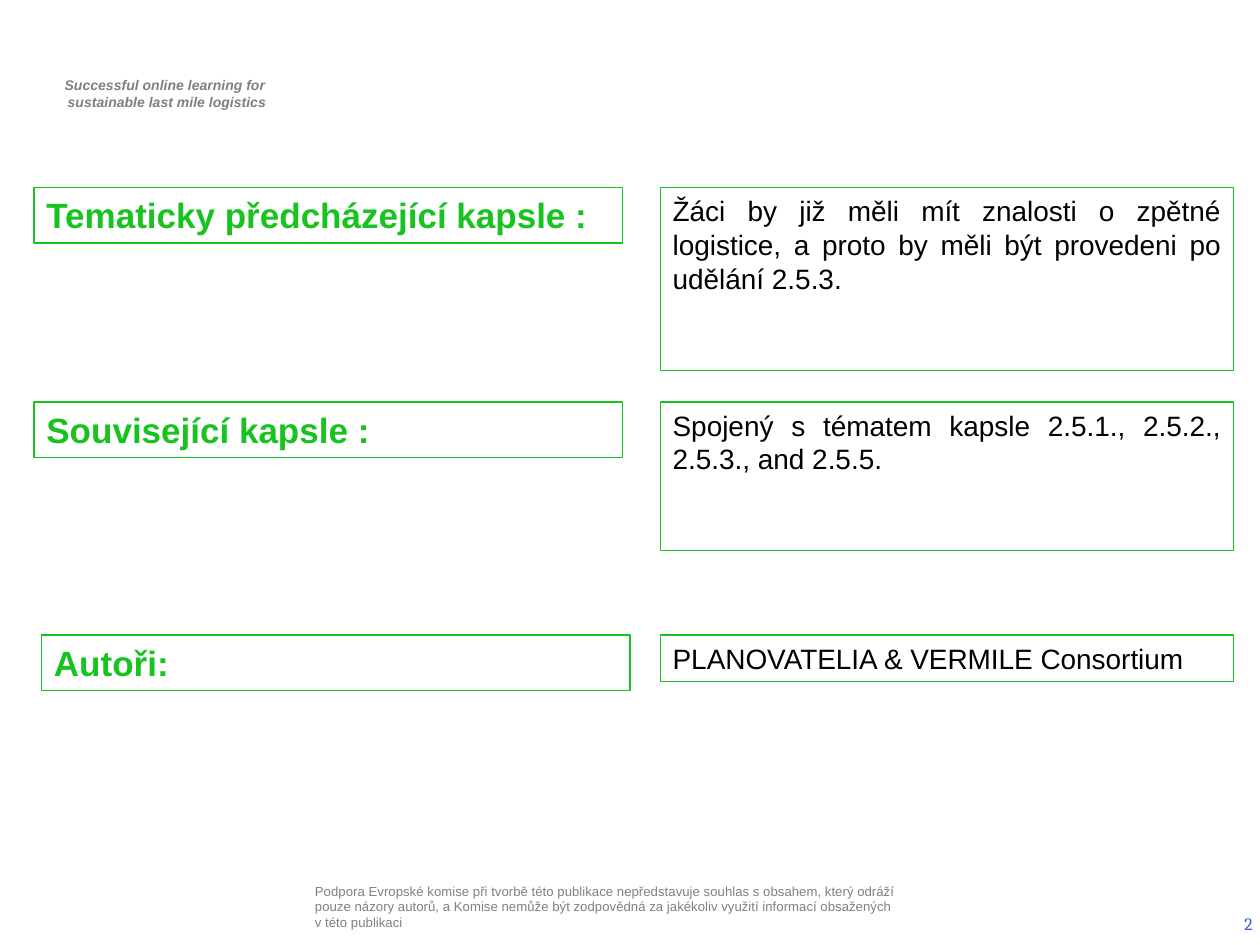
"""Build the capsule overview slide with related topics and authors."""
from pptx import Presentation
from pptx.dml.color import RGBColor
from pptx.enum.shapes import MSO_SHAPE as Shape
from pptx.enum.text import MSO_ANCHOR as Anchor, PP_ALIGN as Align
from pptx.util import Inches, Pt

COLORS = {"green": "18C320", "white": "FFFFFF", "black": "000000",
          "header": "7F7F7F", "footer": "808080", "number": "3366CC"}


def write(box, lines, size, color, align=Align.LEFT, anchor=Anchor.TOP,
          margins=(0.1, 0.05, 0.1, 0.05), bold=False, italic=False, name="Arial"):
    frame = box.text_frame
    frame.word_wrap = True
    frame.vertical_anchor = anchor
    (frame.margin_left, frame.margin_top,
     frame.margin_right, frame.margin_bottom) = map(Inches, margins)
    for index, line in enumerate(lines):
        para = frame.add_paragraph() if index else frame.paragraphs[0]
        para.alignment = align
        span = para.add_run()
        span.text = line
        span.font.name = name
        span.font.size = Pt(size)
        span.font.bold = bold
        span.font.italic = italic
        span.font.color.rgb = RGBColor.from_string(COLORS[color])


def add_panel(page, left, top, width, height):
    panel = page.shapes.add_shape(
        Shape.RECTANGLE, Inches(left), Inches(top), Inches(width), Inches(height))
    panel.shadow.inherit = False
    panel.fill.solid()
    panel.fill.fore_color.rgb = RGBColor.from_string(COLORS["white"])
    panel.line.color.rgb = RGBColor.from_string(COLORS["green"])
    panel.line.width = Pt(0.75)
    return panel


deck = Presentation()
deck.slide_width, deck.slide_height = Inches(10), Inches(7.5)
page = deck.slides.add_slide(deck.slide_layouts[6])

header = page.shapes.add_textbox(Inches(0.29), Inches(0.56), Inches(2.03), Inches(0.37))
write(header, ["Successful online learning for ", "sustainable last mile logistics"],
      8, "header", Align.CENTER, margins=(0.14, 0.05, 0.1, 0.05), bold=True, italic=True)

footer = page.shapes.add_textbox(Inches(2.46), Inches(6.95), Inches(4.73), Inches(0.49))
write(footer, ["Podpora Evropské komise při tvorbě této publikace nepředstavuje souhlas "
               "s obsahem, který odráží pouze názory autorů, a Komise nemůže být "
               "zodpovědná za jakékoliv využití informací obsažených v této publikaci"],
      7.5, "footer", anchor=Anchor.MIDDLE, margins=(0.04,) * 4)

number = page.shapes.add_textbox(Inches(7.71), Inches(7.13), Inches(2.33), Inches(0.4))
write(number, ["2"], 10, "number", Align.RIGHT, Anchor.MIDDLE, name="Cambria")

rows = [
    (1.49, 0.27, "Tematicky předcházející kapsle :", 1.45, Align.JUSTIFY,
     "Žáci by již měli mít znalosti o zpětné logistice, "
     "a proto by měli být provedeni po udělání 2.5.3."),
    (3.19, 0.27, "Související kapsle :", 1.18, Align.JUSTIFY,
     "Spojený s tématem kapsle 2.5.1., 2.5.2., 2.5.3., and 2.5.5."),
    (5.04, 0.33, "Autoři:", 0.37, Align.LEFT, "PLANOVATELIA & VERMILE Consortium"),
]
for top, left, label, height, align, detail in rows:
    write(add_panel(page, left, top, 4.67, 0.44), [label], 20, "green", bold=True)
    write(add_panel(page, 5.24, top, 4.55, height), [detail], 16, "black", align)

deck.save("out.pptx")
